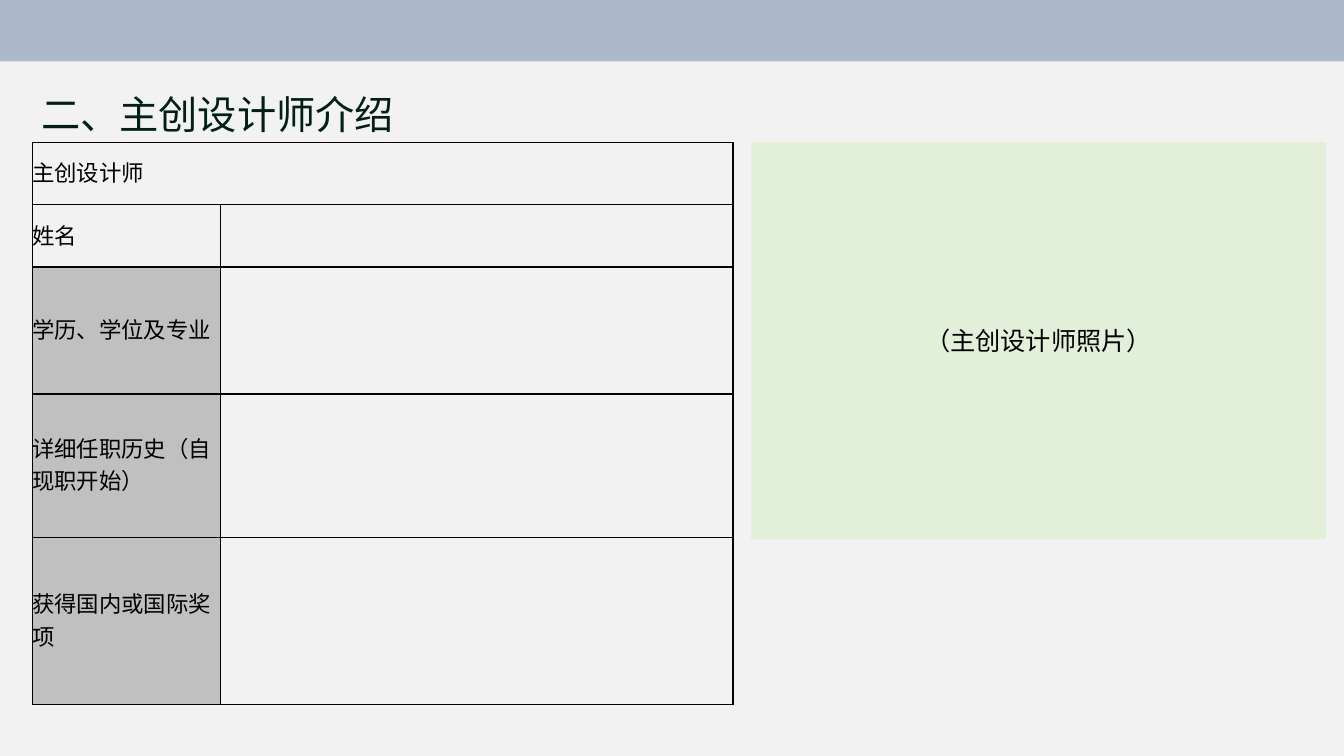
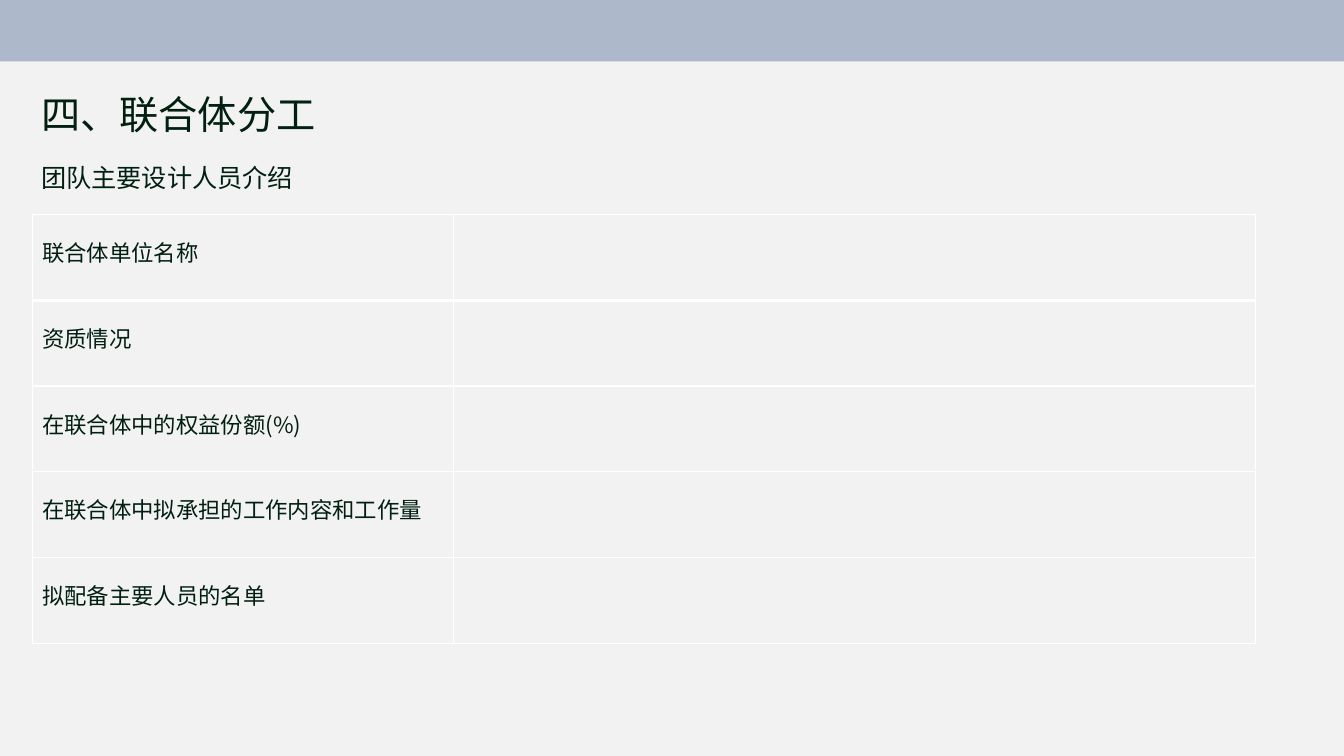
from pptx import Presentation
from pptx.dml.color import RGBColor
from pptx.enum.shapes import MSO_SHAPE
from pptx.enum.text import MSO_ANCHOR, MSO_AUTO_SIZE, PP_ALIGN
from pptx.oxml.ns import qn
from pptx.util import Inches, Pt
from lxml.etree import Element, SubElement

PAPER = RGBColor(0xF2, 0xF2, 0xF2)
BAND = RGBColor(0xAD, 0xB9, 0xCA)
INK = RGBColor(0x02, 0x20, 0x12)
BLACK = RGBColor(0, 0, 0)
RULE = RGBColor(0x08, 0, 0)
WHITE = RGBColor(0xFF, 0xFF, 0xFF)
GREY = RGBColor(0xC0, 0xC0, 0xC0)
GREEN = RGBColor(0xE2, 0xF0, 0xD9)

SANS = "Noto Sans CJK SC"
SERIF = "Times New Roman"
TITLE_ONLY = 5
TEXT_LEFT, TABLE_LEFT, CONTENT_TOP = 0.31, 0.32, 1.41
TEXT_WIDTH = 6.67
LOOSE = 1.5

CELL_MARGINS = {"margin_left": 0, "margin_right": 0, "margin_top": 0,
                "margin_bottom": Inches(0.03)}


def apply(target, values):
    for name, value in values.items():
        setattr(target, name, value)


def place(shape, left, top, width, height):
    apply(shape, {"left": Inches(left), "top": Inches(top),
                  "width": Inches(width), "height": Inches(height)})


class Deck:
    """Holds the presentation, its shared style and the current slide."""

    def __init__(self):
        self.presentation = Presentation()
        apply(self.presentation, {"slide_width": Inches(13.33),
                                  "slide_height": Inches(7.5)})
        background = self.presentation.slide_master.background.fill
        background.solid()
        background.fore_color.rgb = PAPER
        self.slide = None

    def add_slide(self, title):
        layout = self.presentation.slide_layouts[TITLE_ONLY]
        self.slide = self.presentation.slides.add_slide(layout)
        self.panel(-0.06, 0, 13.42, 0.61, BAND)
        heading = self.slide.shapes.title
        place(heading, TEXT_LEFT, 0.61, TEXT_WIDTH, 0.81)
        self.fill_frame(heading.text_frame, title, 28, spacing=LOOSE)

    def fill_frame(self, frame, text, size, color=INK, font=SANS, spacing=1.0,
                   align=PP_ALIGN.LEFT, anchor=MSO_ANCHOR.TOP):
        apply(frame, {"word_wrap": True, "auto_size": MSO_AUTO_SIZE.NONE,
                      "vertical_anchor": anchor})
        self.add_line(frame.paragraphs[0], text, size, color, font, spacing, align)

    def add_line(self, paragraph, text, size, color, font, spacing,
                 align=PP_ALIGN.LEFT):
        apply(paragraph, {"line_spacing": spacing, "alignment": align})
        run = paragraph.add_run()
        run.text = text
        apply(run.font, {"size": Pt(size), "name": font, "bold": False})
        run.font.color.rgb = color
        east_asian = Element(qn("a:ea"), typeface=SANS)
        run.font._element.find(qn("a:latin")).addnext(east_asian)

    def panel(self, left, top, width, height, color):
        shape = self.slide.shapes.add_shape(
            MSO_SHAPE.RECTANGLE, *map(Inches, (left, top, width, height)))
        shape.shadow.inherit = False
        shape.fill.solid()
        shape.fill.fore_color.rgb = color
        shape.line.fill.background()
        return shape

    def text(self, content, left, top, width, height, size):
        box = self.slide.shapes.add_textbox(
            *map(Inches, (left, top, width, height)))
        self.fill_frame(box.text_frame, content, size, spacing=LOOSE)

    def table(self, labels, top, columns, rows, border, color=INK, font=SANS,
              spacing=1.0, cell_format=None):
        """Add a form: labels in the first column, empty cells to fill in."""
        table = self.slide.shapes.add_table(
            len(rows), len(columns), Inches(TABLE_LEFT), Inches(top),
            Inches(sum(columns)), Inches(sum(rows))).table
        apply(table, {"first_row": False, "horz_banding": False})
        for column, width in zip(table.columns, columns):
            column.width = Inches(width)
        for row, height in zip(table.rows, rows):
            row.height = Inches(height)
        for cell in table.iter_cells():
            cell.fill.background()
            apply(cell, cell_format or {})
            for side in "LRTB":
                self.border(cell, side, border, 1)
        for index, label in enumerate(labels):
            paragraph = table.cell(index, 0).text_frame.paragraphs[0]
            self.add_line(paragraph, label, 16, color, font, spacing)
        return table

    def border(self, cell, side, color, width):
        properties = cell._tc.get_or_add_tcPr()
        tag = qn(f"a:ln{side}")
        for old in properties.findall(tag):
            properties.remove(old)
        line = Element(tag, w=str(Pt(width)))
        fill = SubElement(line, qn("a:solidFill"))
        SubElement(fill, qn("a:srgbClr"), val=str(color))
        order = [qn(f"a:ln{name}") for name in "LRTB"]
        before = order[:order.index(tag)]
        properties.insert(sum(child.tag in before for child in properties), line)


def designer_slide(deck):
    deck.add_slide("二、主创设计师介绍")
    profile = deck.table(
        ["主创设计师", "姓名", "学历、学位及专业", "详细任职历史（自现职开始）",
         "获得国内或国际奖项"],
        CONTENT_TOP, [1.87, 5.08], [0.62, 0.62, 1.26, 1.42, 1.66], RULE,
        color=BLACK, font=SERIF,
        cell_format={"vertical_anchor": MSO_ANCHOR.MIDDLE, **CELL_MARGINS})
    profile.cell(0, 0).merge(profile.cell(0, 1))
    for row in range(2, 5):
        fill = profile.cell(row, 0).fill
        fill.solid()
        fill.fore_color.rgb = GREY
    photo = deck.panel(7.45, CONTENT_TOP, 5.7, 3.94, GREEN)
    deck.fill_frame(photo.text_frame, "（主创设计师照片）", 18, color=BLACK,
                    align=PP_ALIGN.CENTER, anchor=MSO_ANCHOR.MIDDLE)


def consortium_slide(deck):
    deck.add_slide("四、联合体分工")
    deck.text("团队主要设计人员介绍", TEXT_LEFT, CONTENT_TOP, TEXT_WIDTH, 0.55, 18)
    division = deck.table(
        ["联合体单位名称", "资质情况", "在联合体中的权益份额(%)",
         "在联合体中拟承担的工作内容和工作量", "拟配备主要人员的名单"],
        2.13, [4.18, 7.95], [0.85] * 5, WHITE, spacing=LOOSE)
    for column in range(2):
        deck.border(division.cell(0, column), "B", WHITE, 3)
        deck.border(division.cell(1, column), "T", WHITE, 3)


def main():
    deck = Deck()
    designer_slide(deck)
    consortium_slide(deck)
    deck.presentation.save("out.pptx")


if __name__ == "__main__":
    main()
